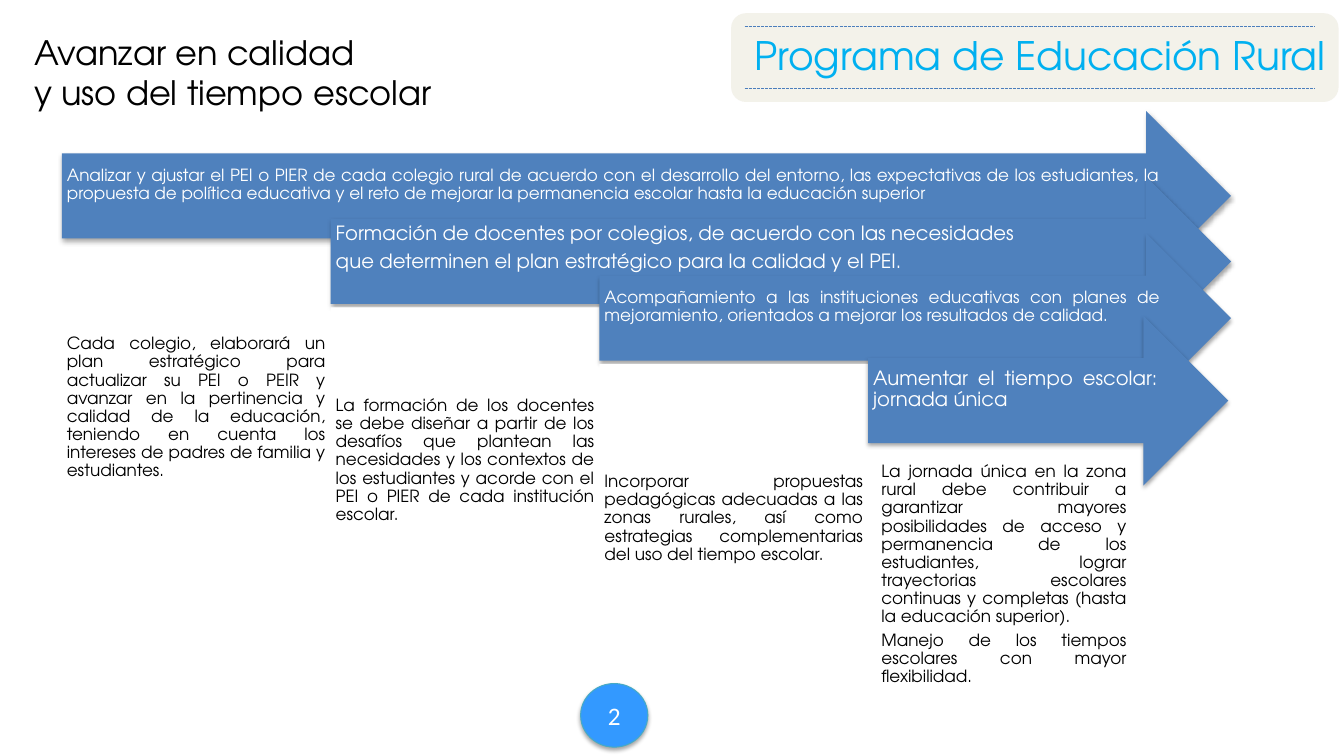
"""Build the slide on school quality and school time: four stepped arrows with a card under each."""
from lxml import etree
from pptx import Presentation
from pptx.dml.color import RGBColor
from pptx.enum.dml import MSO_LINE
from pptx.enum.shapes import MSO_CONNECTOR, MSO_SHAPE as Preset
from pptx.enum.text import MSO_ANCHOR as Anchor, PP_ALIGN as Align
from pptx.oxml import parse_xml
from pptx.oxml.ns import nsdecls, qn
from pptx.util import Inches, Pt

FONT = "TeX Gyre Adventor"
SHADOW = (
    f'<a:effectLst {nsdecls("a")}><a:outerShdw blurRad="40000" dist="23000" dir="5400000" rotWithShape="0">'
    '<a:srgbClr val="000000"><a:alpha val="35000"/></a:srgbClr></a:outerShdw></a:effectLst>'
)

presentation = Presentation()
presentation.slide_width, presentation.slide_height = Inches(13.33), Inches(7.5)
slide = presentation.slides.add_slide(presentation.slide_layouts[6])
COLUMN = presentation.slide_width / 5
ROW = presentation.slide_height / 12


def add_block(preset, left, top, width, height, fill=None, shadow=False):
    """Add a shape, or a text box when preset is None, placed in grid columns and rows."""
    box = (int(left * COLUMN), int(top * ROW), int(width * COLUMN), int(height * ROW))
    if preset is None:
        return slide.shapes.add_textbox(*box)
    shape = slide.shapes.add_shape(preset, *box)
    shape.fill.solid()
    shape.fill.fore_color.rgb = RGBColor.from_string(fill)
    shape.line.fill.background()
    shape.shadow.inherit = False
    if shadow:
        properties = shape._element.spPr
        properties.replace(properties.find(qn("a:effectLst")), parse_xml(SHADOW))
    return shape


def write(shape, lines, size, color, align=Align.LEFT, anchor=Anchor.TOP, font=FONT, insets=None, wrap=True):
    """Write one paragraph per line; justified text is set tight."""
    frame = shape.text_frame
    frame.word_wrap = wrap
    frame.vertical_anchor = anchor
    if insets:
        frame.margin_left, frame.margin_top, frame.margin_right, frame.margin_bottom = map(Inches, insets)
    frame.text = "\n".join(lines)
    for paragraph in frame.paragraphs:
        paragraph.alignment = align
        if align == Align.JUSTIFY:
            paragraph.line_spacing = 0.9
            paragraph.space_after = Pt(0.35 * size)
        paragraph.font.name = font
        paragraph.font.size = Pt(size)
        paragraph.font.color.rgb = RGBColor.from_string(color)


steps = [
    {"arrow": (0.23, 1.76, 4.58), "size": 12, "anchor": Anchor.MIDDLE,
     "goal": ["Analizar y ajustar el PEI o PIER de cada colegio rural de acuerdo con el desarrollo del entorno, "
              "las expectativas de los estudiantes, la propuesta de política educativa y el reto de mejorar "
              "la permanencia escolar hasta la educación superior"],
     "card": (0.23, 3.98, 1, 4.99),
     "detail": ["Cada colegio, elaborará un plan estratégico para actualizar su PEI o PEIR y avanzar en la "
                "pertinencia y calidad de la educación, teniendo en cuenta los intereses de padres de familia "
                "y estudiantes."]},
    {"arrow": (1.23, 2.8, 4.58), "size": 14, "anchor": Anchor.TOP,
     "goal": ["Formación de docentes por colegios, de acuerdo con las necesidades",
              "que determinen el plan estratégico para la calidad y el PEI."],
     "card": (1.23, 4.88, 1, 4.86),
     "detail": ["La formación de los docentes se debe diseñar a partir de los desafíos que plantean las "
                "necesidades y los contextos de los estudiantes y acorde con el PEI o PIER de cada institución "
                "escolar."]},
    {"arrow": (2.23, 3.7, 4.58), "size": 12, "anchor": Anchor.MIDDLE,
     "goal": ["Acompañamiento a las instituciones educativas con planes de mejoramiento, orientados a mejorar "
              "los resultados de calidad."],
     "card": (2.23, 5.78, 1, 4.9),
     "detail": ["Incorporar propuestas pedagógicas adecuadas a las zonas rurales, así como estrategias "
                "complementarias del uso del tiempo escolar."]},
    {"arrow": (3.23, 5.01, 4.57), "size": 14, "anchor": Anchor.MIDDLE,
     "goal": ["Aumentar el tiempo escolar: jornada única"],
     "card": (3.26, 7.14, 0.95, 3.97),
     "detail": ["La jornada única en la zona rural debe contribuir a garantizar mayores posibilidades de acceso "
                "y permanencia de los estudiantes, lograr trayectorias escolares continuas y completas (hasta "
                "la educación superior).",
                "Manejo de los tiempos escolares con mayor flexibilidad."]},
]
for step in steps:
    left, top, tip = step["arrow"]
    arrow = add_block(Preset.RIGHT_ARROW, left, top, tip - left, 2.7, "4F81BD", shadow=True)
    write(arrow, step["goal"], step["size"], "FFFFFF", Align.JUSTIFY, step["anchor"],
          insets=(0.05, 0.05, 0.28, 0.27))
    card = add_block(Preset.RECTANGLE, *step["card"], "FFFFFF")
    write(card, step["detail"], 12, "000000", Align.JUSTIFY, Anchor.MIDDLE, insets=(0.05,) * 4)

banner = add_block(Preset.ROUNDED_RECTANGLE, 2.72, 0.21, 2.26, 1.41, "EEECE1")
banner_color = banner._element.spPr.find(qn("a:solidFill"))[0]
etree.SubElement(banner_color, qn("a:alpha")).set("val", "68000")
program = add_block(None, 2.77, 0.42, 2.26, 1.57)
write(program, ["Programa de Educación Rural"], 28, "00B0F0")
for row in (0.42, 1.41):
    rule = slide.shapes.add_connector(
        MSO_CONNECTOR.STRAIGHT, int(2.77 * COLUMN), int(row * ROW), int(4.89 * COLUMN), int(row * ROW))
    rule.line.color.rgb = RGBColor.from_string("4B7EBC")
    rule.line.width = Pt(0.75)
    rule.line.dash_style = MSO_LINE.SQUARE_DOT
    etree.SubElement(rule._element.spPr, qn("a:effectLst"))

badge = add_block(Preset.OVAL, 2.16, 10.85, 0.25, 1.01, "3399FF", shadow=True)
badge.line.color.rgb = RGBColor.from_string("46AAC5")
badge.line.width = Pt(0.75)
write(badge, ["2"], 18, "FFFFFF", Align.CENTER, Anchor.MIDDLE, font="Calibri")

heading = add_block(None, 0.09, 0.42, 1.56, 1.46)
write(heading, ["Avanzar en calidad", "y uso del tiempo escolar"], 24, "000000", wrap=False)

presentation.save("out.pptx")
